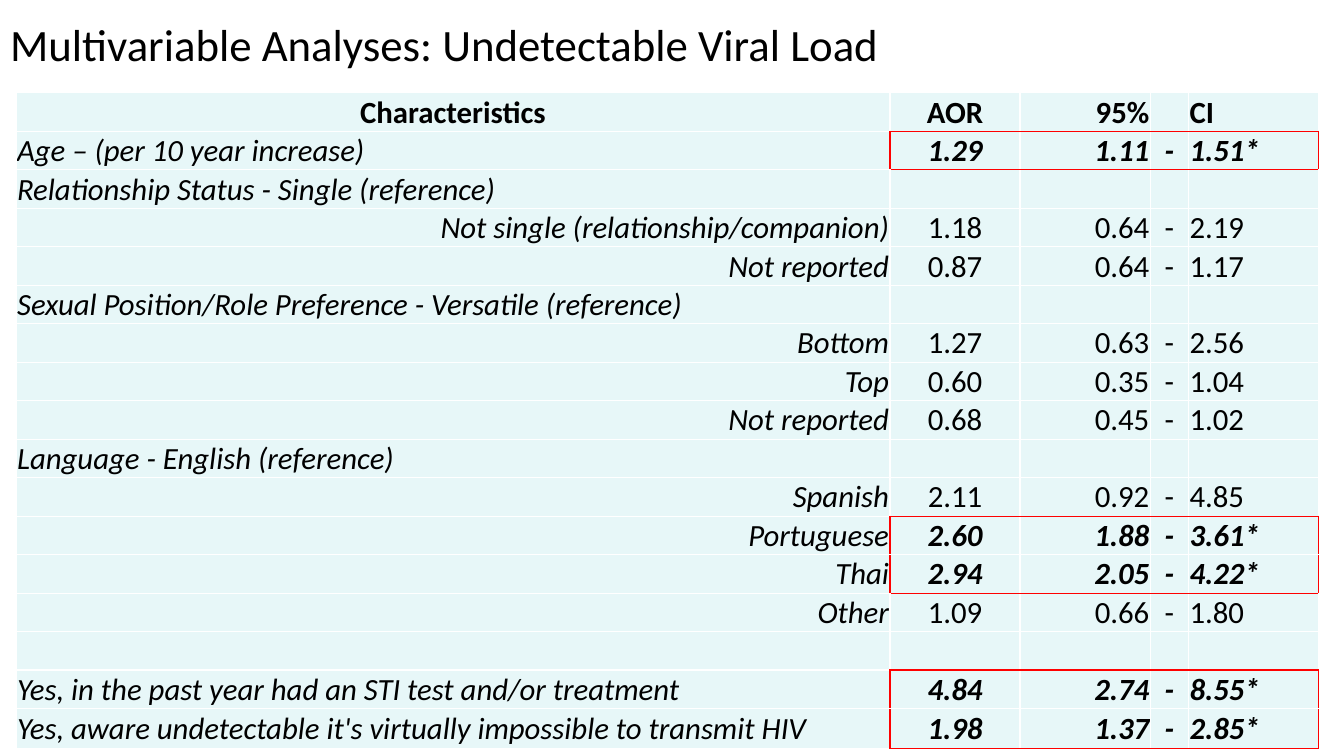
from lxml.etree import SubElement
from pptx import Presentation
from pptx.dml.color import RGBColor
from pptx.enum.text import MSO_ANCHOR, PP_ALIGN
from pptx.oxml.ns import qn
from pptx.util import Inches, Pt

BLACK = RGBColor(0x00, 0x00, 0x00)
WHITE = RGBColor(0xFF, 0xFF, 0xFF)
RED = RGBColor(0xFF, 0x00, 0x00)
PALE = RGBColor(0xE7, 0xF7, 0xF8)
FONT = "Calibri"
LEFT, CENTER, RIGHT = PP_ALIGN.LEFT, PP_ALIGN.CENTER, PP_ALIGN.RIGHT

COLUMN_SHARES = (8.66, 1.29, 1.29, 0.38, 1.29)
COLUMN_ALIGN = (LEFT, CENTER, RIGHT, CENTER, LEFT)
HEADER = ("Characteristics", "AOR", "95%", "", "CI")
RESULTS = [
    (LEFT, "Age – (per 10 year increase)", "1.29", "1.11", "1.51*"),
    (LEFT, "Relationship Status - Single (reference)", "", "", ""),
    (RIGHT, "Not single (relationship/companion)", "1.18", "0.64", "2.19"),
    (RIGHT, "Not reported", "0.87", "0.64", "1.17"),
    (LEFT, "Sexual Position/Role Preference - Versatile (reference)", "", "", ""),
    (RIGHT, "Bottom", "1.27", "0.63", "2.56"),
    (RIGHT, "Top", "0.60", "0.35", "1.04"),
    (RIGHT, "Not reported", "0.68", "0.45", "1.02"),
    (LEFT, "Language - English (reference)", "", "", ""),
    (RIGHT, "Spanish", "2.11", "0.92", "4.85"),
    (RIGHT, "Portuguese", "2.60", "1.88", "3.61*"),
    (RIGHT, "Thai", "2.94", "2.05", "4.22*"),
    (RIGHT, "Other", "1.09", "0.66", "1.80"),
    (LEFT, "", "", "", ""),
    (LEFT, "Yes, in the past year had an STI test and/or treatment", "4.84", "2.74", "8.55*"),
    (LEFT, "Yes, aware undetectable it's virtually impossible to transmit HIV",
     "1.98", "1.37", "2.85*"),
]


def is_significant(row):
    """Tell whether a table row holds a starred result."""
    return 1 <= row <= len(RESULTS) and RESULTS[row - 1][-1].endswith("*")


def add_borders(cell, row, col):
    """Draw white cell edges, with red ones around starred results."""
    last = len(COLUMN_SHARES) - 1
    inside = is_significant(row)
    red_edges = {
        "a:lnL": inside and col == 1,
        "a:lnR": inside and col in (0, last),
        "a:lnT": col > 0 and inside != is_significant(row - 1),
        "a:lnB": col > 0 and inside != is_significant(row + 1),
    }
    tc_pr = cell._tc.get_or_add_tcPr()
    for tag, is_red in red_edges.items():
        line = SubElement(tc_pr, qn(tag), w=str(Pt(1)))
        fill = SubElement(line, qn("a:solidFill"))
        SubElement(fill, qn("a:srgbClr"), val=str(RED if is_red else WHITE))


def fill_cell(cell, text, align, anchor, bold, italic):
    """Write and format one table cell."""
    cell.fill.solid()
    cell.fill.fore_color.rgb = PALE
    cell.margin_left = cell.margin_right = cell.margin_top = Inches(0.01)
    cell.margin_bottom = 0
    cell.vertical_anchor = anchor
    p = cell.text_frame.paragraphs[0]
    p.text = text
    p.alignment = align
    for r in p.runs:
        r.font.name = FONT
        r.font.size = Pt(22)
        r.font.bold = bold
        r.font.italic = italic
        r.font.color.rgb = BLACK


def add_title(s, left, top, width, height):
    """Place the slide title in the given box."""
    title = s.shapes.title
    title.left, title.top = Inches(left), Inches(top)
    title.width, title.height = Inches(width), Inches(height)
    tf = title.text_frame
    tf.text = "Multivariable Analyses: Undetectable Viral Load"
    tf.word_wrap = True
    tf.vertical_anchor = MSO_ANCHOR.BOTTOM
    tf.margin_bottom = Inches(0.54)
    p = tf.paragraphs[0]
    p.alignment = LEFT
    p.line_spacing = 0.9
    font = p.runs[0].font
    font.name, font.size = FONT, Pt(32)
    font.color.rgb = BLACK


def add_results_table(s, left, top, width, height):
    """Place the odds ratio table in the given box."""
    last_row = len(RESULTS)
    table = s.shapes.add_table(last_row + 1, len(COLUMN_SHARES), Inches(left),
                               Inches(top), Inches(width), Inches(height)).table
    table.horz_banding = False
    for column, share in zip(table.columns, COLUMN_SHARES):
        column.width = Inches(width * share / sum(COLUMN_SHARES))
    for table_row in table.rows:
        table_row.height = Inches(0.38)
    table.rows[last_row].height = Inches(height - 0.38 * last_row)

    rows = [(CENTER, HEADER)]
    for align, label, ratio, low, high in RESULTS:
        rows.append((align, (label, ratio, low, "-" if ratio else "", high)))
    for row, (label_align, texts) in enumerate(rows):
        for col, text in enumerate(texts):
            cell = table.cell(row, col)
            add_borders(cell, row, col)
            middle = col == 0 or row in (0, last_row)
            starred = col > 0 and is_significant(row)
            fill_cell(cell, text,
                      align=COLUMN_ALIGN[col] if col else label_align,
                      anchor=MSO_ANCHOR.MIDDLE if middle else MSO_ANCHOR.BOTTOM,
                      bold=row == 0 or starred,
                      italic=row > 0 and (col == 0 or starred))


def main():
    """Build the slide and save it."""
    prs = Presentation()
    prs.slide_width, prs.slide_height = Inches(13.33), Inches(7.5)
    s = prs.slides.add_slide(prs.slide_layouts[5])
    add_title(s, 0, 0, 10.5, 1.25)
    add_results_table(s, 0.16, 0.92, 12.92, 6.48)
    prs.save("out.pptx")


if __name__ == "__main__":
    main()
